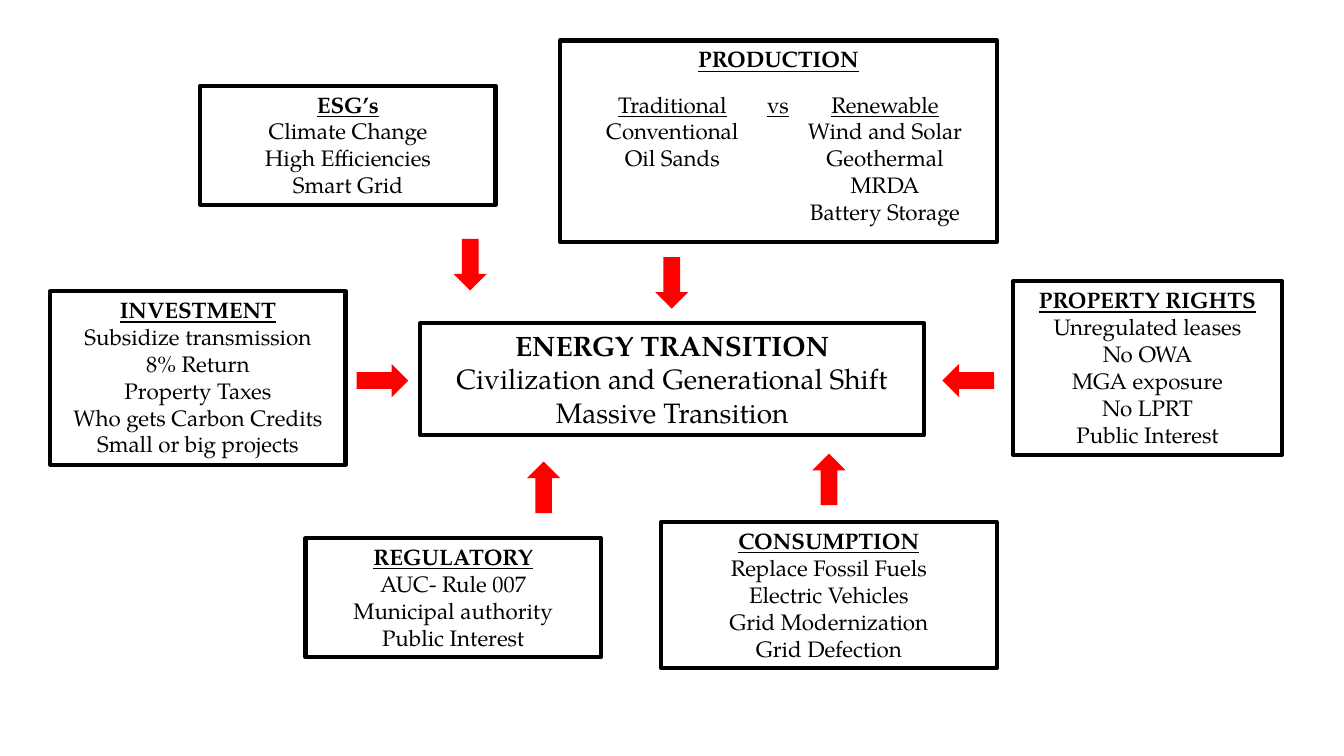
from pptx import Presentation
from pptx.dml.color import RGBColor
from pptx.enum.shapes import MSO_SHAPE as Kind
from pptx.enum.text import MSO_ANCHOR as Anchor, PP_ALIGN as Align
from pptx.util import Cm, Pt

FONT = "TeX Gyre Pagella"
BLACK = "000000"
RED = "FF0000"

BOXES = [
    (14.12, 1.02, 11, 5.08, ["PRODUCTION"]),
    (25.53, 7.09, 6.78, 4.37, ["PROPERTY RIGHTS", "Unregulated leases", "No OWA",
                               "MGA exposure", "No LPRT", "Public Interest"]),
    (16.66, 13.16, 8.46, 3.68, ["CONSUMPTION", "Replace Fossil Fuels", "Electric Vehicles",
                                "Grid Modernization", "Grid Defection"]),
    (7.7, 13.56, 7.44, 3, ["REGULATORY", "AUC- Rule 007", "Municipal authority",
                           "Public Interest"]),
    (1.27, 7.34, 7.44, 4.37, ["INVESTMENT", "Subsidize transmission", "8% Return",
                              "Property Taxes", "Who gets Carbon Credits",
                              "Small or big projects"]),
    (5.05, 2.16, 7.44, 3, ["ESG’s", "Climate Change", "High Efficiencies", "Smart Grid"]),
]
LISTS = [
    (14.53, 4.83, 2.39, ["Traditional", "Conventional", "Oil Sands"]),
    (19.89, 4.83, 3.76, ["Renewable", "Wind and Solar", "Geothermal", "MRDA",
                         "Battery Storage"]),
    (18.57, 2.08, 0.94, ["vs"]),
]
ARROWS = [
    (20.47, 11.43, 180),
    (13.28, 11.63, 180),
    (23.98, 8.94, 90),
    (9.22, 8.94, 270),
    (11.43, 6.02, 0),
    (16.51, 6.48, 0),
]


def color(code):
    """Turn a hex string into a colour."""
    return RGBColor.from_string(code)


def write(shape, lines, size=16, bold=True, under=True):
    """Fill a shape with centred lines, the first one as heading."""
    frame = shape.text_frame
    frame.word_wrap = True
    frame.vertical_anchor = Anchor.TOP
    frame.text = "\n".join(lines)
    for row, para in enumerate(frame.paragraphs):
        para.alignment = Align.CENTER
        for run in para.runs:
            font = run.font
            font.name = FONT
            font.size = Pt(size)
            font.color.rgb = color(BLACK)
            font.bold = bold and row == 0
            font.underline = under and row == 0


def add_box(slide, left, top, width, height, lines, **style):
    """Add a black framed box with text."""
    box = slide.shapes.add_shape(Kind.RECTANGLE, Cm(left), Cm(top), Cm(width), Cm(height))
    box.shadow.inherit = False
    box.fill.background()
    box.line.color.rgb = color(BLACK)
    box.line.width = Pt(3)
    write(box, lines, **style)


def add_list(slide, left, width, height, lines):
    """Add a frameless list under the production heading."""
    text = slide.shapes.add_textbox(Cm(left), Cm(2.16), Cm(width), Cm(height))
    write(text, lines, bold=False)


def add_arrow(slide, left, top, turn):
    """Add a red block arrow turned from pointing down."""
    arrow = slide.shapes.add_shape(Kind.DOWN_ARROW, Cm(left), Cm(top), Cm(0.84), Cm(1.3))
    arrow.rotation = turn
    arrow.shadow.inherit = False
    arrow.fill.solid()
    arrow.fill.fore_color.rgb = color(RED)
    arrow.line.fill.background()


def main():
    """Build and save the slide."""
    deck = Presentation()
    deck.slide_width, deck.slide_height = Cm(33.87), Cm(19.05)
    slide = deck.slides.add_slide(deck.slide_layouts[6])
    add_box(slide, 10.59, 8.15, 12.7, 2.82,
            ["ENERGY TRANSITION", "Civilization and Generational Shift", "Massive Transition"],
            size=20, under=False)
    for box in BOXES:
        add_box(slide, *box)
    for item in LISTS:
        add_list(slide, *item)
    for arrow in ARROWS:
        add_arrow(slide, *arrow)
    deck.save("out.pptx")


if __name__ == "__main__":
    main()
